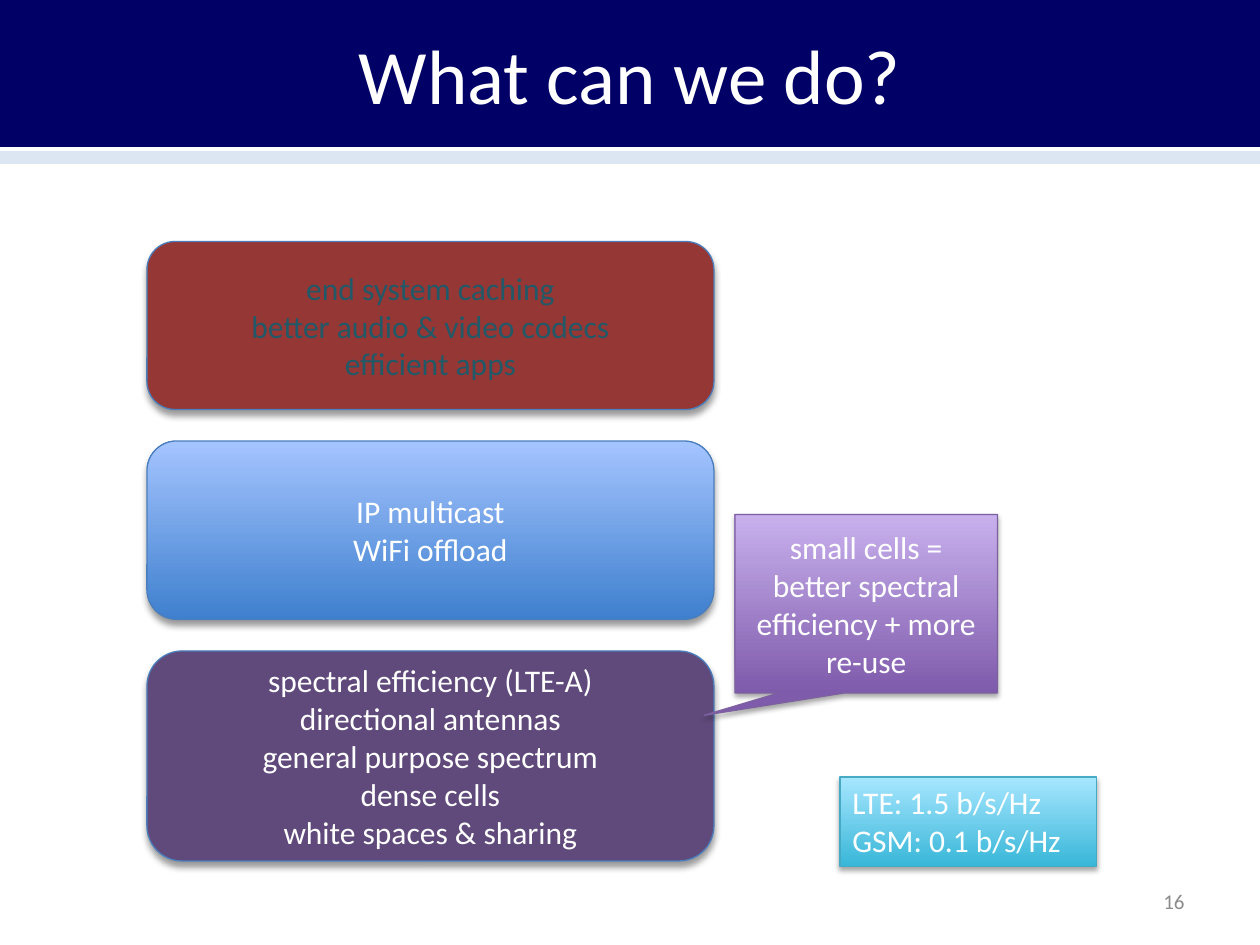
from collections import namedtuple
from dataclasses import dataclass

from lxml import etree
from pptx import Presentation
from pptx import util as u
from pptx.dml.color import RGBColor
from pptx.enum import shapes, text
from pptx.oxml.ns import qn

Box = namedtuple("Box", "left top width height")
Shadow = namedtuple("Shadow", "opacity blur distance")


@dataclass(frozen=True)
class Theme:
    font: str = "Calibri"
    title_size: int = 44
    body_size: int = 18
    number_size: int = 12
    white: str = "FFFFFF"
    navy: str = "000066"
    pale_blue: str = "DCE6F2"
    grey: str = "8C8C8C"
    teal: str = "215968"
    red: str = "953735"
    purple: str = "604A7B"
    layer_line: str = "4B7EBC"
    callout_line: str = "7D60A0"
    note_line: str = "46AAC5"
    blue_gradient: tuple = ("3F80CE", "A4C4FF")
    violet_gradient: tuple = ("7F5BAB", "C8B0ED")
    aqua_gradient: tuple = ("39B7D8", "A7E6FF")
    layer_shadow: Shadow = Shadow(40, 4, 3)
    callout_shadow: Shadow = Shadow(35, 3.1, 1.8)


THEME = Theme()


def points(box):
    return [u.Pt(length) for length in box]


def write_text(shape, lines, size, color, align=text.PP_ALIGN.CENTER,
               anchor=text.MSO_ANCHOR.MIDDLE, wrap=True):
    frame = shape.text_frame
    frame.word_wrap = wrap
    frame.vertical_anchor = anchor
    for index, line in enumerate(lines):
        paragraph = frame.add_paragraph() if index else frame.paragraphs[0]
        paragraph.alignment = align
        run = paragraph.add_run()
        run.text = line
        run.font.name = THEME.font
        run.font.size = u.Pt(size)
        run.font.color.rgb = RGBColor.from_string(color)


def paint(shape, fill, line=None):
    if isinstance(fill, tuple):
        shape.fill.gradient()
        shape.fill.gradient_angle = 90
        for stop, color in zip(shape.fill.gradient_stops, fill):
            stop.color.rgb = RGBColor.from_string(color)
            stop.position = fill.index(color)
    else:
        shape.fill.solid()
        shape.fill.fore_color.rgb = RGBColor.from_string(fill)
    if line:
        shape.line.color.rgb = RGBColor.from_string(line)
        shape.line.width = u.Pt(0.75)
    else:
        shape.line.fill.background()
    shape.shadow.inherit = False


def cast_shadow(shape, shadow):
    effects = shape.element.spPr.find(qn("a:effectLst"))
    outer = etree.SubElement(
        effects, qn("a:outerShdw"), blurRad=str(u.Pt(shadow.blur)),
        dist=str(u.Pt(shadow.distance)), dir="5400000", rotWithShape="0")
    color = etree.SubElement(outer, qn("a:srgbClr"), val="000000")
    etree.SubElement(color, qn("a:alpha"), val=str(shadow.opacity * 1000))


def add_header(slide, box, title):
    band = slide.shapes.add_shape(shapes.MSO_SHAPE.RECTANGLE, *points(box))
    paint(band, THEME.navy)
    rule_top = u.Pt(box.top + box.height + 6)
    rule = slide.shapes.add_connector(
        shapes.MSO_CONNECTOR.STRAIGHT, u.Pt(box.left), rule_top,
        u.Pt(box.left + box.width), rule_top)
    rule.line.color.rgb = RGBColor.from_string(THEME.pale_blue)
    rule.line.width = u.Pt(8)
    etree.SubElement(rule.element.spPr, qn("a:effectLst"))
    title_box = Box(box.left + 36, box.top + 3, box.width - 72, box.height)
    heading = slide.shapes.add_textbox(*points(title_box))
    write_text(heading, [title], THEME.title_size, THEME.white)


def add_page_number(slide, box, number):
    label = slide.shapes.add_textbox(*points(box))
    write_text(label, [str(number)], THEME.number_size, THEME.grey,
               align=text.PP_ALIGN.RIGHT)


def add_layers(slide, box, gap, layers):
    top = box.top
    for height, fill, color, lines in layers:
        layer = slide.shapes.add_shape(
            shapes.MSO_SHAPE.ROUNDED_RECTANGLE,
            *points(Box(box.left, top, box.width, height)))
        paint(layer, fill, THEME.layer_line)
        cast_shadow(layer, THEME.layer_shadow)
        write_text(layer, lines, THEME.body_size, color)
        top += height + gap


def add_callout(slide, box, message):
    callout = slide.shapes.add_shape(
        shapes.MSO_SHAPE.RECTANGULAR_CALLOUT, *points(box))
    callout.adjustments[0] = -0.617
    callout.adjustments[1] = 0.625
    paint(callout, THEME.violet_gradient, THEME.callout_line)
    cast_shadow(callout, THEME.callout_shadow)
    write_text(callout, [message], THEME.body_size, THEME.white)


def add_rate_note(slide, box, rates):
    note = slide.shapes.add_shape(shapes.MSO_SHAPE.RECTANGLE, *points(box))
    paint(note, THEME.aqua_gradient, THEME.note_line)
    cast_shadow(note, THEME.callout_shadow)
    write_text(note, rates, THEME.body_size, THEME.white,
               align=text.PP_ALIGN.LEFT, anchor=text.MSO_ANCHOR.TOP, wrap=False)
    note.text_frame.auto_size = text.MSO_AUTO_SIZE.SHAPE_TO_FIT_TEXT


def main():
    presentation = Presentation()
    presentation.slide_width = u.Pt(720)
    presentation.slide_height = u.Pt(540)
    slide = presentation.slides.add_slide(presentation.slide_layouts[6])

    add_header(slide, Box(0, -6, 720, 90), "What can we do?")
    add_page_number(slide, Box(516, 500.5, 168, 28.75), 16)
    add_layers(slide, Box(84, 138, 324, 354), 18, [
        (96, THEME.red, THEME.teal,
         ["end system caching", "better audio & video codecs",
          "efficient apps"]),
        (102, THEME.blue_gradient, THEME.white,
         ["IP multicast", "WiFi offload"]),
        (120, THEME.purple, THEME.white,
         ["spectral efficiency (LTE-A)", "directional antennas",
          "general purpose spectrum", "dense cells",
          "white spaces & sharing"]),
    ])
    add_callout(slide, Box(420, 294, 150, 102),
                "small cells = better spectral efficiency + more re-use")
    add_rate_note(slide, Box(480, 444, 146.5, 51),
                  ["LTE: 1.5 b/s/Hz", "GSM: 0.1 b/s/Hz"])

    presentation.save("out.pptx")


if __name__ == "__main__":
    main()
